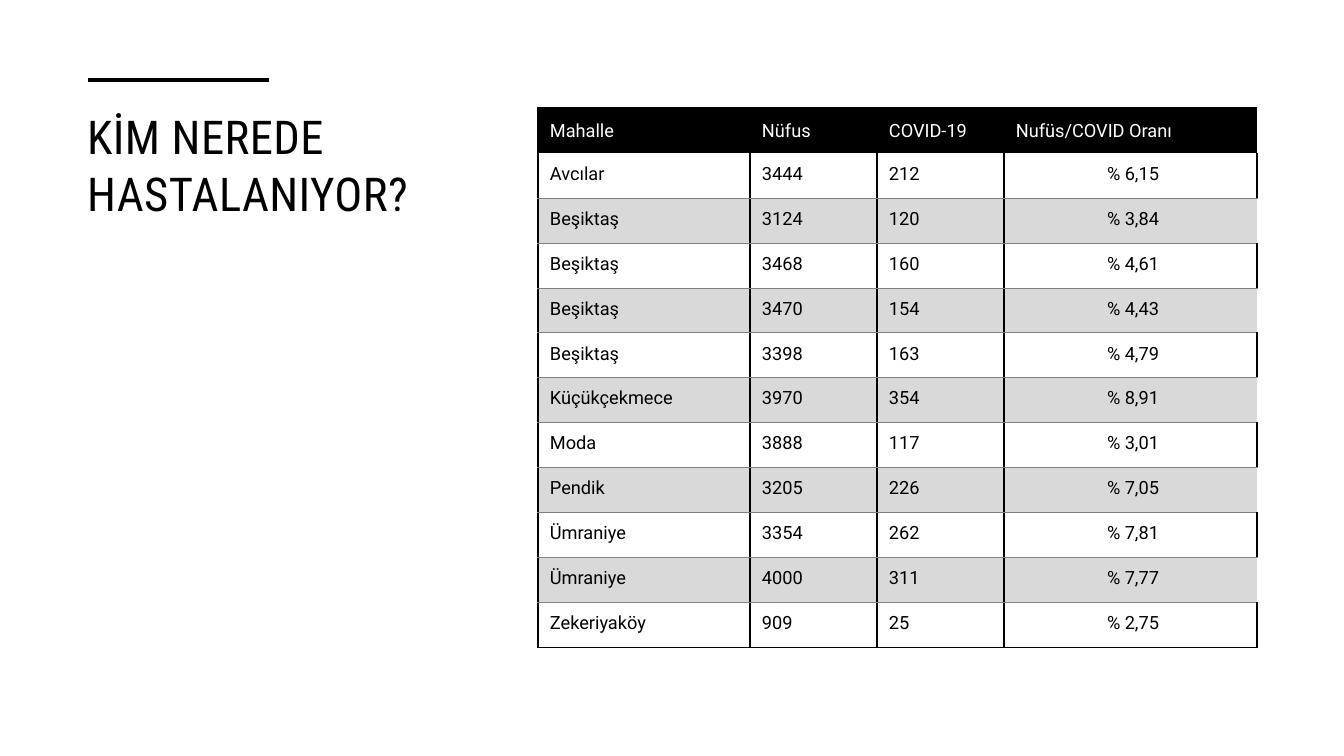
"""Build the slide comparing COVID-19 cases with population by neighbourhood."""
from dataclasses import dataclass

from lxml.etree import SubElement
from pptx import Presentation
from pptx.dml.color import RGBColor
from pptx.enum.shapes import MSO_CONNECTOR
from pptx.enum.text import MSO_ANCHOR, PP_ALIGN
from pptx.oxml.ns import qn
from pptx.util import Emu, Pt


@dataclass(frozen=True)
class Theme:
    ink: str = "000000"
    paper: str = "FFFFFF"
    band: str = "D9D9D9"
    rule: str = "808080"
    title_font: str = "Roboto Condensed"
    body_font: str = "Roboto"
    title_size: float = 33.3
    body_size: float = 13
    accent_width: float = 3.5
    frame_width: float = 1.5
    rule_width: float = 0.5


@dataclass(frozen=True)
class Neighbourhood:
    name: str
    population: str
    cases: str
    ratio: str


@dataclass(frozen=True)
class Border:
    edge: str
    color: str
    width: float


THEME = Theme()
EMU_PER_PX = 914400 / 100.8
COLUMN_WIDTHS = (212, 127, 127, 253)
ROW_HEIGHT = 45
NO_GRID_STYLE = "{2D5ABB26-0587-4C30-8999-92F81FD0307C}"
HEADER = Neighbourhood("Mahalle", "Nüfus", "COVID-19", "Nufüs/COVID Oranı")
NEIGHBOURHOODS = (
    Neighbourhood("Avcılar", "3444", "212", "% 6,15"),
    Neighbourhood("Beşiktaş", "3124", "120", "% 3,84"),
    Neighbourhood("Beşiktaş", "3468", "160", "% 4,61"),
    Neighbourhood("Beşiktaş", "3470", "154", "% 4,43"),
    Neighbourhood("Beşiktaş", "3398", "163", "% 4,79"),
    Neighbourhood("Küçükçekmece", "3970", "354", "% 8,91"),
    Neighbourhood("Moda", "3888", "117", "% 3,01"),
    Neighbourhood("Pendik", "3205", "226", "% 7,05"),
    Neighbourhood("Ümraniye", "3354", "262", "% 7,81"),
    Neighbourhood("Ümraniye", "4000", "311", "% 7,77"),
    Neighbourhood("Zekeriyaköy", "909", "25", "% 2,75"),
)


def px(length: int) -> Emu:
    return Emu(round(length * EMU_PER_PX))


def write_text(text_frame, text: str, *, font: str, size: float, color: str,
               align=PP_ALIGN.LEFT, line_spacing: float = 1.0, tracking: int = 0) -> None:
    text_frame.text = text
    paragraph = text_frame.paragraphs[0]
    paragraph.alignment = align
    paragraph.line_spacing = line_spacing
    for run in paragraph.runs:
        run.font.name = font
        run.font.size = Pt(size)
        run.font.color.rgb = RGBColor.from_string(color)
        if tracking:
            run.font._element.set("spc", str(tracking))


def add_title(slide) -> None:
    title = slide.shapes.title
    title.left, title.top, title.width, title.height = px(77), px(99), px(401), px(173)
    text_frame = title.text_frame
    text_frame.word_wrap = True
    text_frame.vertical_anchor = MSO_ANCHOR.TOP
    text_frame.margin_top = px(7)
    write_text(text_frame, "KİM NEREDE\vHASTALANIYOR?", font=THEME.title_font,
               size=THEME.title_size, color=THEME.ink, line_spacing=1.03, tracking=30)


def add_accent(slide) -> None:
    accent = slide.shapes.add_connector(MSO_CONNECTOR.STRAIGHT, px(88), px(80), px(269), px(80))
    accent.line.color.rgb = RGBColor.from_string(THEME.ink)
    accent.line.width = Pt(THEME.accent_width)
    SubElement(accent._element.spPr, qn("a:effectLst"))


def cell_borders(row: int, column: int) -> list[Border]:
    is_header = row == 0
    is_banded = row > 0 and row % 2 == 0
    is_last_column = column == len(COLUMN_WIDTHS) - 1
    borders = []
    if not is_header or column == 0:
        borders.append(Border("L", THEME.ink, THEME.frame_width))
    if not is_header and not (is_banded and is_last_column):
        borders.append(Border("R", THEME.ink, THEME.frame_width))
    if is_header:
        borders.append(Border("T", THEME.ink, THEME.frame_width))
    elif is_banded:
        borders.append(Border("T", THEME.rule, THEME.rule_width))
    elif row == len(NEIGHBOURHOODS):
        borders.append(Border("B", THEME.ink, THEME.frame_width))
    else:
        borders.append(Border("B", THEME.rule, THEME.rule_width))
    return borders


def draw_border(cell, border: Border) -> None:
    properties = cell._tc.get_or_add_tcPr()
    line = SubElement(properties, qn(f"a:ln{border.edge}"), w=str(Pt(border.width)))
    fill = SubElement(line, qn("a:solidFill"))
    SubElement(fill, qn("a:srgbClr"), val=border.color)


def format_cell(cell, text: str, row: int, column: int) -> None:
    is_header = row == 0
    for border in cell_borders(row, column):
        draw_border(cell, border)
    if is_header or row % 2 == 0:
        cell.fill.solid()
        cell.fill.fore_color.rgb = RGBColor.from_string(THEME.ink if is_header else THEME.band)
    else:
        cell.fill.background()
    cell.vertical_anchor = MSO_ANCHOR.MIDDLE if is_header else MSO_ANCHOR.TOP
    cell.margin_left, cell.margin_right = px(12), px(7)
    cell.margin_top = cell.margin_bottom = px(9)
    is_ratio = not is_header and column == len(COLUMN_WIDTHS) - 1
    write_text(cell.text_frame, text, font=THEME.body_font, size=THEME.body_size,
               color=THEME.paper if is_header else THEME.ink,
               align=PP_ALIGN.CENTER if is_ratio else PP_ALIGN.LEFT, line_spacing=1.07)


def add_case_table(slide) -> None:
    records = (HEADER, *NEIGHBOURHOODS)
    frame = slide.shapes.add_table(len(records), len(COLUMN_WIDTHS), px(538), px(108),
                                   px(sum(COLUMN_WIDTHS)), px(ROW_HEIGHT * len(records)))
    table = frame.table
    table._tbl.tblPr.find(qn("a:tableStyleId")).text = NO_GRID_STYLE
    for table_column, width in zip(table.columns, COLUMN_WIDTHS):
        table_column.width = px(width)
    for row, record in enumerate(records):
        table.rows[row].height = px(ROW_HEIGHT)
        values = (record.name, record.population, record.cases, record.ratio)
        for column, text in enumerate(values):
            format_cell(table.cell(row, column), text, row, column)


def main() -> None:
    presentation = Presentation()
    presentation.slide_width, presentation.slide_height = px(1344), px(756)
    slide = presentation.slides.add_slide(presentation.slide_layouts[5])
    slide.background.fill.solid()
    slide.background.fill.fore_color.rgb = RGBColor.from_string(THEME.paper)
    add_title(slide)
    add_accent(slide)
    add_case_table(slide)
    presentation.save("out.pptx")


if __name__ == "__main__":
    main()
